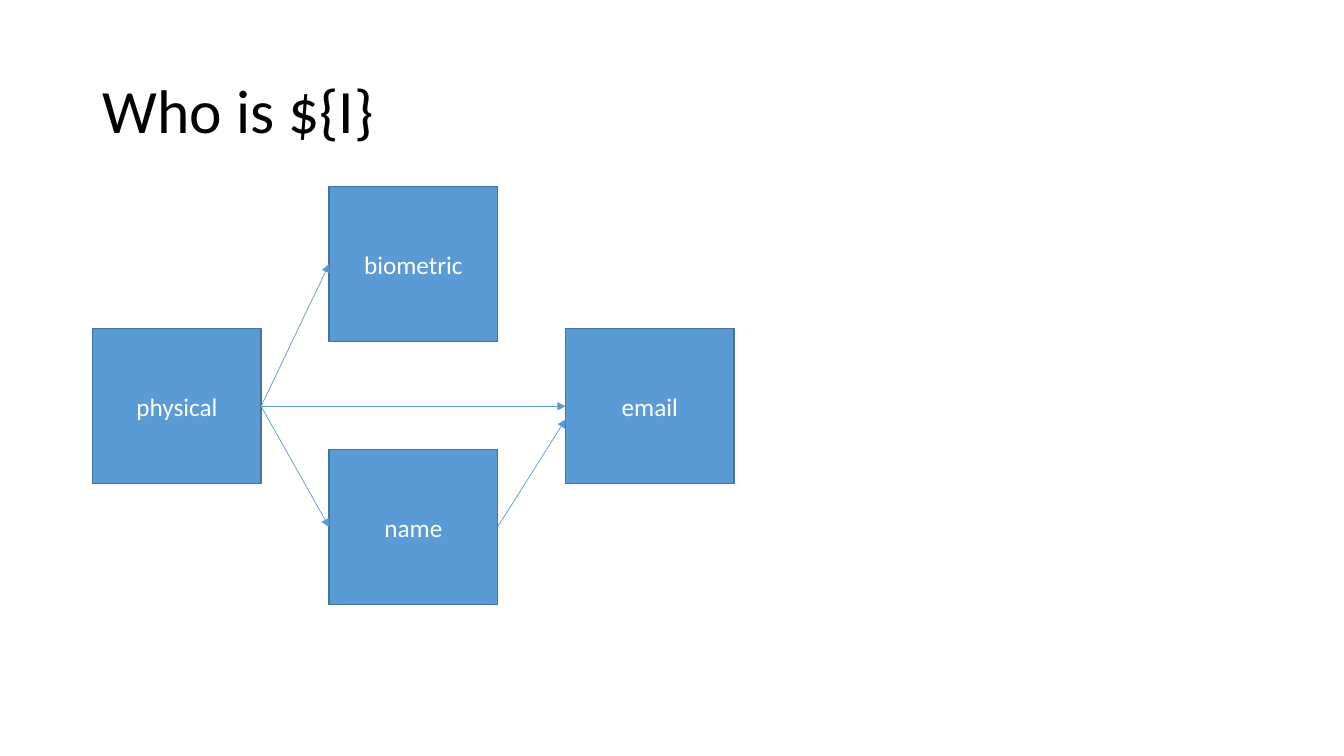
"""Build the identity diagram slide."""
from dataclasses import dataclass

from lxml import etree
from pptx import Presentation
from pptx.dml.color import RGBColor
from pptx.enum import shapes, text
from pptx.oxml import ns
from pptx import util as u

SLIDE_WIDTH, SLIDE_HEIGHT = 13.33, 7.5
LEFT_MARGIN, COLUMN_STEP = 0.92, 2.345
ROW_TOPS = (1.85, 3.26, 4.46)
BOX_WIDTH, BOX_HEIGHT = 1.67, 1.54
FONT = "Calibri"
BLUE, DARK_BLUE, WHITE, BLACK = "5B9BD5", "43739E", "FFFFFF", "000000"
RIGHT_SITE, LEFT_SITE = 3, 1


@dataclass(frozen=True)
class Box:
    label: str
    column: int
    row: int

    @property
    def left(self) -> float:
        return LEFT_MARGIN + self.column * COLUMN_STEP

    @property
    def top(self) -> float:
        return ROW_TOPS[self.row]

    @property
    def middle(self) -> float:
        return self.top + BOX_HEIGHT / 2


@dataclass(frozen=True)
class Arrow:
    source: str
    target: str
    drop: float = 0


BOXES = (
    Box("physical", 0, 1),
    Box("biometric", 1, 0),
    Box("name", 1, 2),
    Box("email", 2, 1),
)
ARROWS = (
    Arrow("physical", "biometric"),
    Arrow("physical", "name"),
    Arrow("physical", "email"),
    Arrow("name", "email", drop=0.13),
)


def color(value: str) -> RGBColor:
    return RGBColor.from_string(value)


def write(shape, content: str, size: float, font_color: str, alignment) -> None:
    frame = shape.text_frame
    frame.text = content
    frame.word_wrap = True
    frame.auto_size = text.MSO_AUTO_SIZE.NONE
    frame.vertical_anchor = text.MSO_ANCHOR.MIDDLE
    paragraph = frame.paragraphs[0]
    paragraph.alignment = alignment
    font = paragraph.runs[0].font
    font.name, font.size = FONT, u.Pt(size)
    font.color.rgb = color(font_color)


def add_title(slide, content: str) -> None:
    title = slide.shapes.title
    title.left, title.top = u.Inches(LEFT_MARGIN), u.Inches(0.4)
    title.width, title.height = u.Inches(11.5), u.Inches(1.45)
    write(title, content, 44, BLACK, text.PP_ALIGN.LEFT)
    title.text_frame.paragraphs[0].line_spacing = 0.9


def add_box(slide, box: Box):
    shape = slide.shapes.add_shape(
        shapes.MSO_SHAPE.RECTANGLE,
        u.Inches(box.left), u.Inches(box.top),
        u.Inches(BOX_WIDTH), u.Inches(BOX_HEIGHT),
    )
    shape.shadow.inherit = False
    shape.fill.solid()
    shape.fill.fore_color.rgb = color(BLUE)
    shape.line.color.rgb = color(DARK_BLUE)
    shape.line.width = u.Pt(1)
    write(shape, box.label, 18, WHITE, text.PP_ALIGN.CENTER)
    return shape


def add_arrow(slide, arrow: Arrow, boxes: dict[str, Box], drawn: dict) -> None:
    source, target = boxes[arrow.source], boxes[arrow.target]
    connector = slide.shapes.add_connector(
        shapes.MSO_CONNECTOR.STRAIGHT,
        u.Inches(source.left + BOX_WIDTH), u.Inches(source.middle),
        u.Inches(target.left), u.Inches(target.middle + arrow.drop),
    )
    connector.begin_connect(drawn[arrow.source], RIGHT_SITE)
    if not arrow.drop:
        connector.end_connect(drawn[arrow.target], LEFT_SITE)
    connector.line.color.rgb = color(BLUE)
    connector.line.width = u.Pt(0.5)
    etree.SubElement(connector.line._get_or_add_ln(), ns.qn("a:tailEnd"), type="triangle")
    etree.SubElement(connector._element.spPr, ns.qn("a:effectLst"))


def main() -> None:
    presentation = Presentation()
    presentation.slide_width = u.Inches(SLIDE_WIDTH)
    presentation.slide_height = u.Inches(SLIDE_HEIGHT)
    slide = presentation.slides.add_slide(presentation.slide_layouts.get_by_name("Title Only"))
    add_title(slide, "Who is ${I}")
    boxes = {box.label: box for box in BOXES}
    drawn = {box.label: add_box(slide, box) for box in BOXES}
    for arrow in ARROWS:
        add_arrow(slide, arrow, boxes, drawn)
    presentation.save("out.pptx")


if __name__ == "__main__":
    main()
